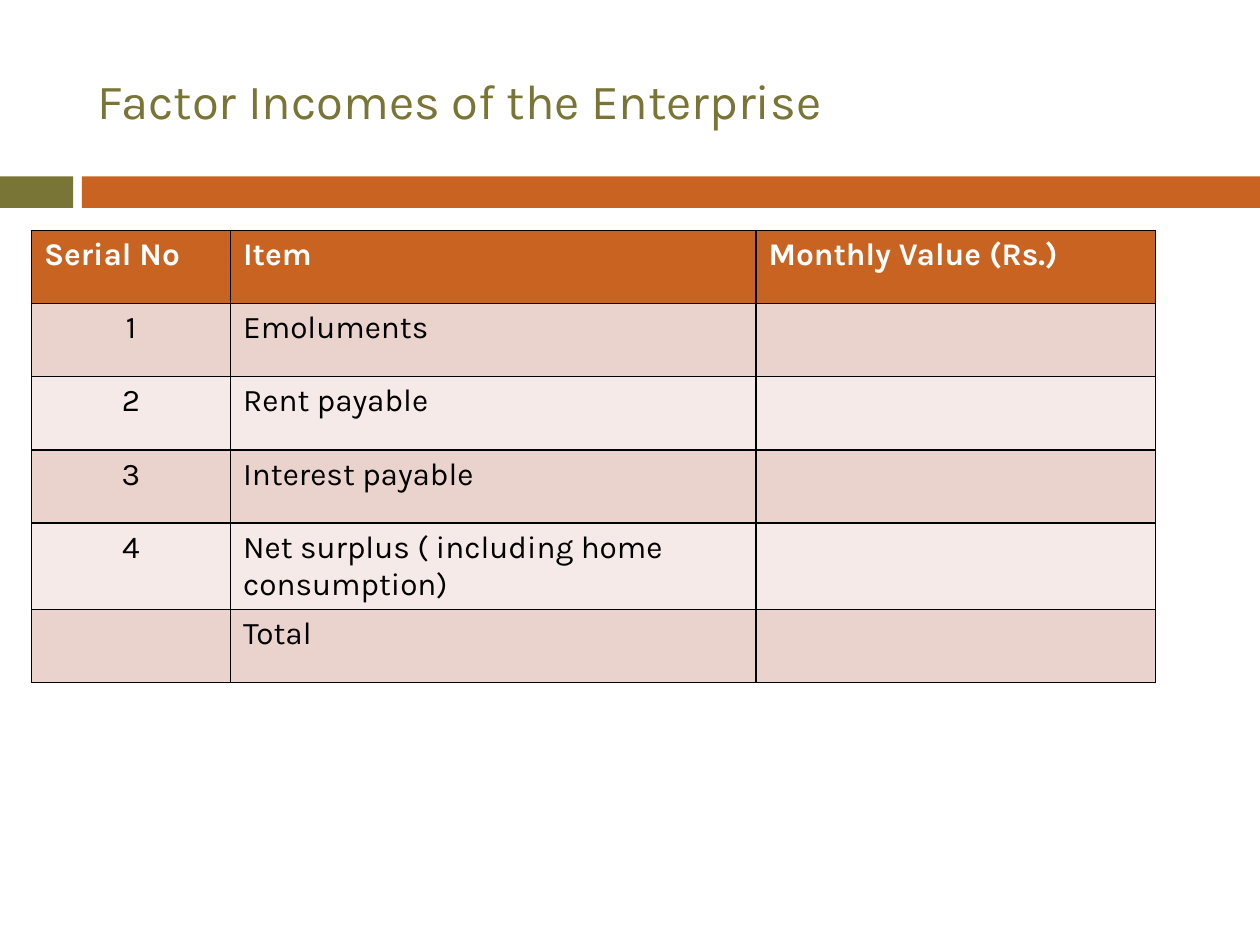
from pptx import Presentation
from pptx.dml.color import RGBColor
from pptx.enum.shapes import MSO_SHAPE
from pptx.enum.text import MSO_ANCHOR, PP_ALIGN
from pptx.oxml import parse_xml
from pptx.oxml.ns import nsdecls
from pptx.util import Inches, Pt

FONT = "Karla"
OLIVE, ORANGE, WHITE, BLACK = "787537", "C86322", "FFFFFF", "000000"
BANDS = ("EBD3CD", "F5EAE8")

COLUMN_WIDTHS = (1.58, 4.17, 3.17)
ROWS = [
    ("Serial No", "Item", "Monthly Value (Rs.)"),
    ("1", "Emoluments", ""),
    ("2", "Rent payable", ""),
    ("3", "Interest payable", ""),
    ("4", "Net surplus ( including home consumption)", ""),
    ("", "Total", ""),
]


def color(value):
    return RGBColor.from_string(value)


def write_text(frame, text, size=18, fill=BLACK, bold=False, align=PP_ALIGN.LEFT):
    paragraph = frame.paragraphs[0]
    paragraph.alignment = align
    paragraph.font.size = Pt(size)
    if text:
        run = paragraph.add_run()
        run.text = text
        run.font.name = FONT
        run.font.size = Pt(size)
        run.font.bold = bold
        run.font.color.rgb = color(fill)


def add_title(slide, left, top, width, height):
    title = slide.shapes.title
    title.left, title.top = Inches(left), Inches(top)
    title.width, title.height = Inches(width), Inches(height)
    title.text_frame.vertical_anchor = MSO_ANCHOR.MIDDLE
    write_text(title.text_frame, "Factor Incomes of the Enterprise", size=28, fill=OLIVE)


def add_divider(slide, left, top, width, height, accent=0.58, gap=0.07):
    # Short accent block, a gap, then the long bar
    start = accent + gap
    for offset, length, fill in ((0, accent, OLIVE), (start, width - start, ORANGE)):
        bar = slide.shapes.add_shape(
            MSO_SHAPE.RECTANGLE,
            Inches(left + offset), Inches(top), Inches(length), Inches(height))
        bar.shadow.inherit = False
        bar.fill.solid()
        bar.fill.fore_color.rgb = color(fill)
        bar.line.fill.background()


def set_borders(cell, line_color=BLACK, width=1):
    properties = cell._tc.get_or_add_tcPr()
    for index, side in enumerate(("lnL", "lnR", "lnT", "lnB")):
        properties.insert(index, parse_xml(
            f'<a:{side} {nsdecls("a")} w="{Pt(width)}"><a:solidFill>'
            f'<a:srgbClr val="{line_color}"/></a:solidFill></a:{side}>'))


def add_income_table(slide, left, top, width, height):
    table = slide.shapes.add_table(
        len(ROWS), len(COLUMN_WIDTHS),
        Inches(left), Inches(top), Inches(width), Inches(height)).table
    for column, column_width in zip(table.columns, COLUMN_WIDTHS):
        column.width = Inches(column_width)
    for row_index, row in enumerate(ROWS):
        header = row_index == 0
        fill = ORANGE if header else BANDS[(row_index - 1) % 2]
        for column_index, text in enumerate(row):
            cell = table.cell(row_index, column_index)
            cell.fill.solid()
            cell.fill.fore_color.rgb = color(fill)
            set_borders(cell)
            centered = column_index == 0 and not header
            write_text(cell.text_frame, text, bold=header,
                       fill=WHITE if header else BLACK,
                       align=PP_ALIGN.CENTER if centered else PP_ALIGN.LEFT)


def main():
    presentation = Presentation()
    presentation.slide_width, presentation.slide_height = Inches(10), Inches(7.5)
    slide = presentation.slides.add_slide(presentation.slide_layouts[5])
    add_divider(slide, 0, 1.4, 10, 0.25)
    add_title(slide, 0.67, 0.25, 8.92, 1.08)
    add_income_table(slide, 0.25, 1.83, sum(COLUMN_WIDTHS), 0.58 * len(ROWS))
    presentation.save("out.pptx")


if __name__ == "__main__":
    main()
